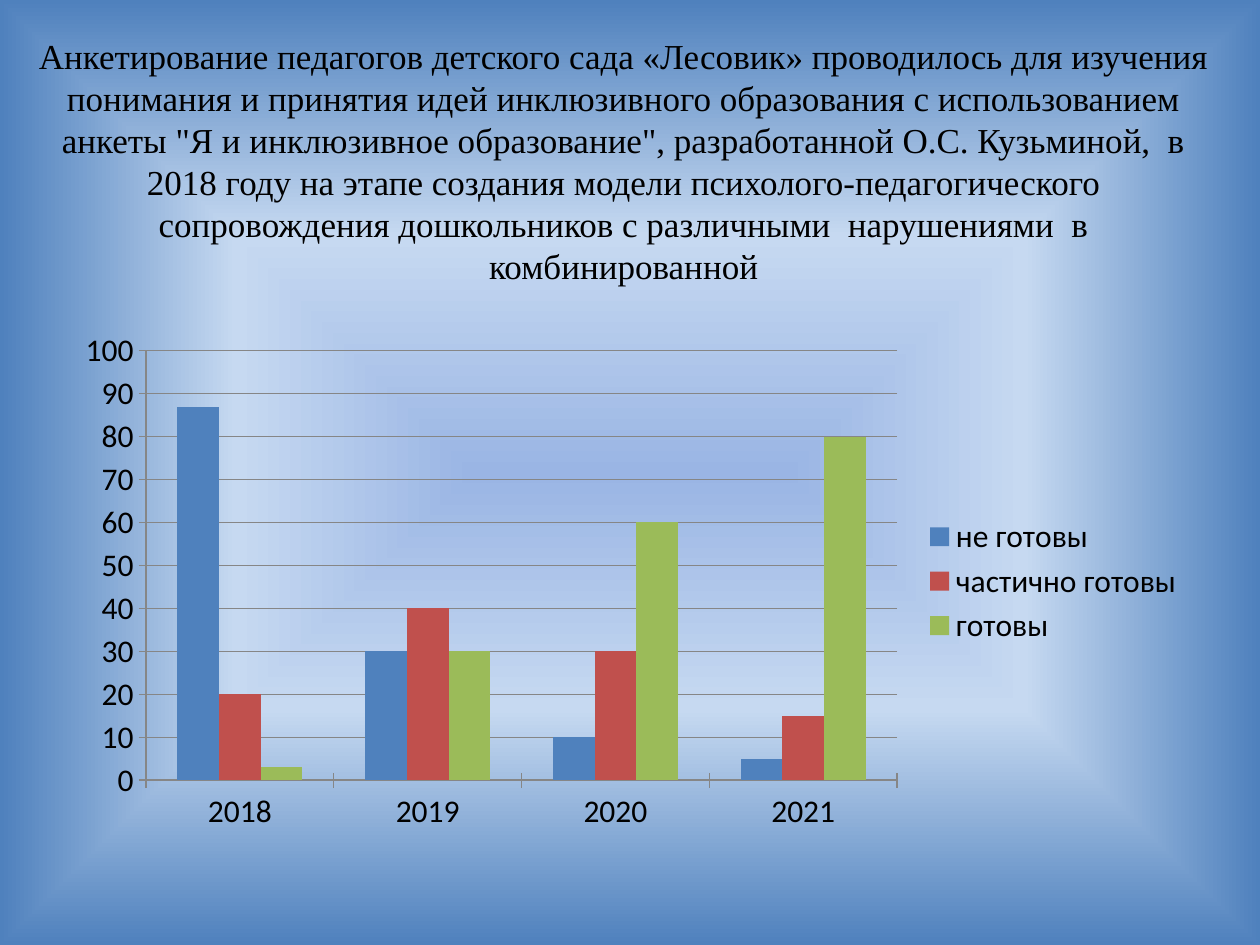
from lxml import etree
from pptx import Presentation
from pptx.chart.data import CategoryChartData
from pptx.dml.color import RGBColor
from pptx.enum.chart import XL_CHART_TYPE, XL_LEGEND_POSITION, XL_TICK_MARK
from pptx.enum.text import MSO_ANCHOR, MSO_AUTO_SIZE, PP_ALIGN
from pptx.oxml.ns import qn
from pptx.util import Inches, Pt

COLUMN = XL_CHART_TYPE.COLUMN_CLUSTERED
RIGHT = XL_LEGEND_POSITION.RIGHT
CROSS = XL_TICK_MARK.CROSS
MIDDLE = MSO_ANCHOR.MIDDLE
FIXED = MSO_AUTO_SIZE.NONE
CENTER = PP_ALIGN.CENTER

TITLE = (
    'Анкетирование педагогов детского сада «Лесовик» проводилось для изучения '
    'понимания и принятия идей инклюзивного образования с использованием анкеты '
    '"Я и инклюзивное образование", разработанной О.С. Кузьминой,  в 2018 году '
    'на этапе создания модели психолого-педагогического сопровождения '
    'дошкольников с различными  нарушениями  в комбинированной'
)
YEARS = ["2018", "2019", "2020", "2021"]
SERIES = [
    ("не готовы", (87, 30, 10, 5), "4F81BD"),
    ("частично готовы", (20, 40, 30, 15), "C0504D"),
    ("готовы", (3, 30, 60, 80), "9BBB59"),
]
STOPS = [(0, "9AB5E4"), (50, "C6D9F1"), (100, "4F81BD")]


def style(font, name, size, color="000000"):
    font.name, font.size = name, Pt(size)
    font.color.rgb = RGBColor.from_string(color)


def add_back(slide):
    """Fill the slide with a gradient that spreads from its centre."""
    fill = slide.background.fill
    fill.gradient()
    grad = slide.element.find(".//" + qn("a:gradFill"))
    for part in list(grad):
        grad.remove(part)
    stops = etree.SubElement(grad, qn("a:gsLst"))
    for share, color in STOPS:
        stop = etree.SubElement(stops, qn("a:gs"), pos=str(share * 1000))
        etree.SubElement(stop, qn("a:srgbClr"), val=color)
    shape = etree.SubElement(grad, qn("a:path"))
    shape.set("path", "shape")
    half = dict.fromkeys("ltrb", "50000")
    etree.SubElement(shape, qn("a:fillToRect"), half)


def add_title(slide, box):
    title = slide.shapes.title
    title.left, title.top, title.width, title.height = box
    frame = title.text_frame
    frame.word_wrap, frame.auto_size = True, FIXED
    frame.vertical_anchor = MIDDLE
    para = frame.paragraphs[0]
    para.alignment = CENTER
    run = para.add_run()
    run.text = TITLE
    style(run.font, "Times New Roman", 20)


def add_chart(slide, box):
    data = CategoryChartData()
    data.categories = YEARS
    for name, vals, _ in SERIES:
        data.add_series(name, vals)
    chart = slide.shapes.add_chart(COLUMN, *box, data).chart
    style(chart.font, "Calibri", 18)
    chart.has_title = False

    # Legend
    chart.has_legend = True
    chart.legend.position = RIGHT
    chart.legend.include_in_layout = False

    # Axes
    for axis in (chart.category_axis, chart.value_axis):
        axis.major_tick_mark = CROSS
        axis.format.line.color.rgb = RGBColor.from_string("868686")
    scale = chart.value_axis
    scale.minimum_scale, scale.maximum_scale, scale.major_unit = 0, 100, 10
    scale.has_major_gridlines = True
    scale.major_gridlines.format.line.color.rgb = RGBColor.from_string("868686")

    # Columns
    plot = chart.plots[0]
    plot.gap_width, plot.overlap, plot.vary_by_categories = 150, 0, False
    for bars, (_, _, color) in zip(plot.series, SERIES):
        bars.format.fill.solid()
        bars.format.fill.fore_color.rgb = RGBColor.from_string(color)


def main():
    deck = Presentation()
    deck.slide_width, deck.slide_height = Inches(10), Inches(7.5)
    wide, high = deck.slide_width, deck.slide_height

    def box(left, top, width, height):
        """Turn shares of the slide into lengths."""
        return (int(left * wide), int(top * high),
                int(width * wide), int(height * high))

    slide = deck.slides.add_slide(deck.slide_layouts[5])
    add_back(slide)
    add_title(slide, box(0.02, 0.02, 0.95, 0.3))
    add_chart(slide, box(0.05, 0.34, 0.9, 0.55))
    deck.save("out.pptx")


if __name__ == "__main__":
    main()
